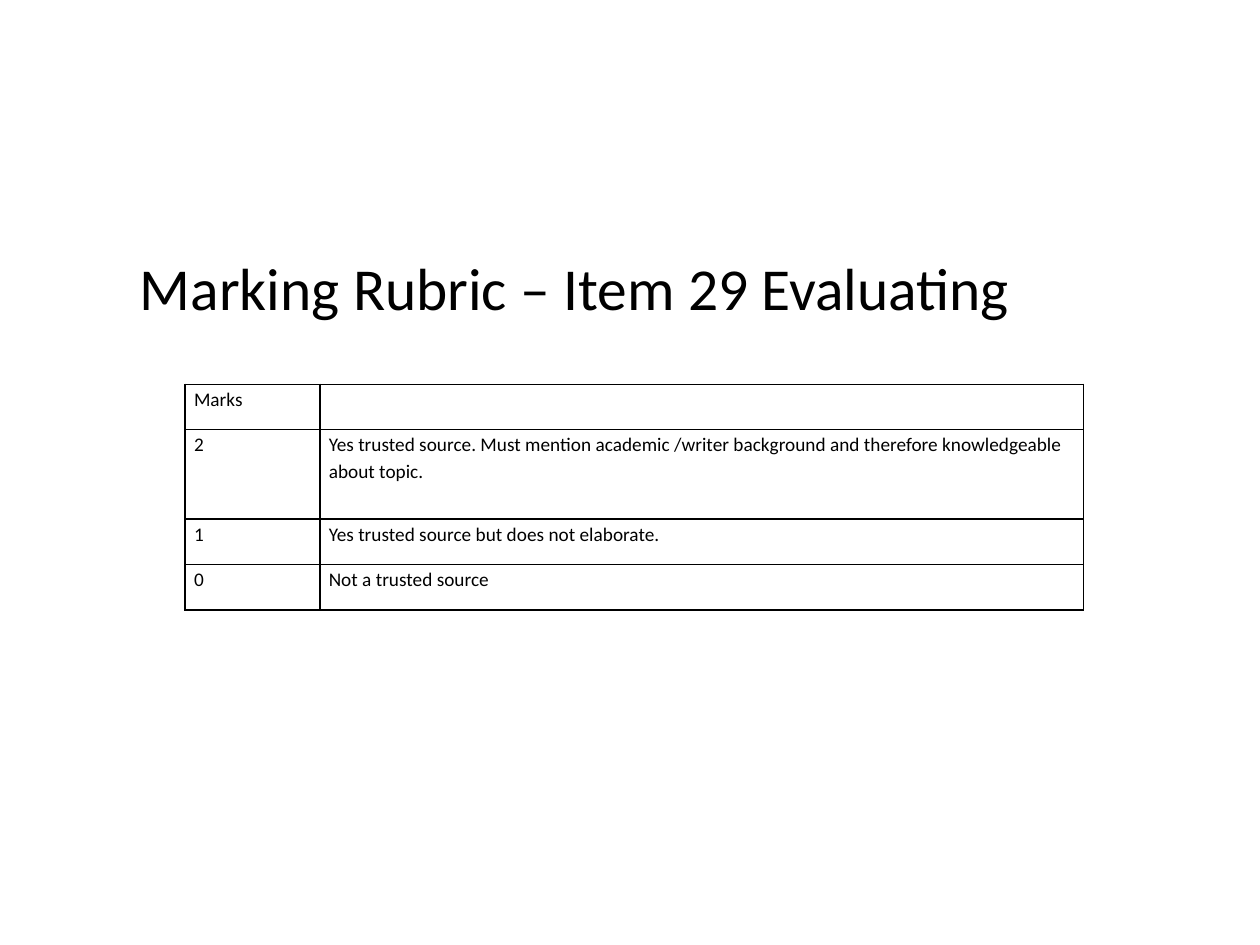
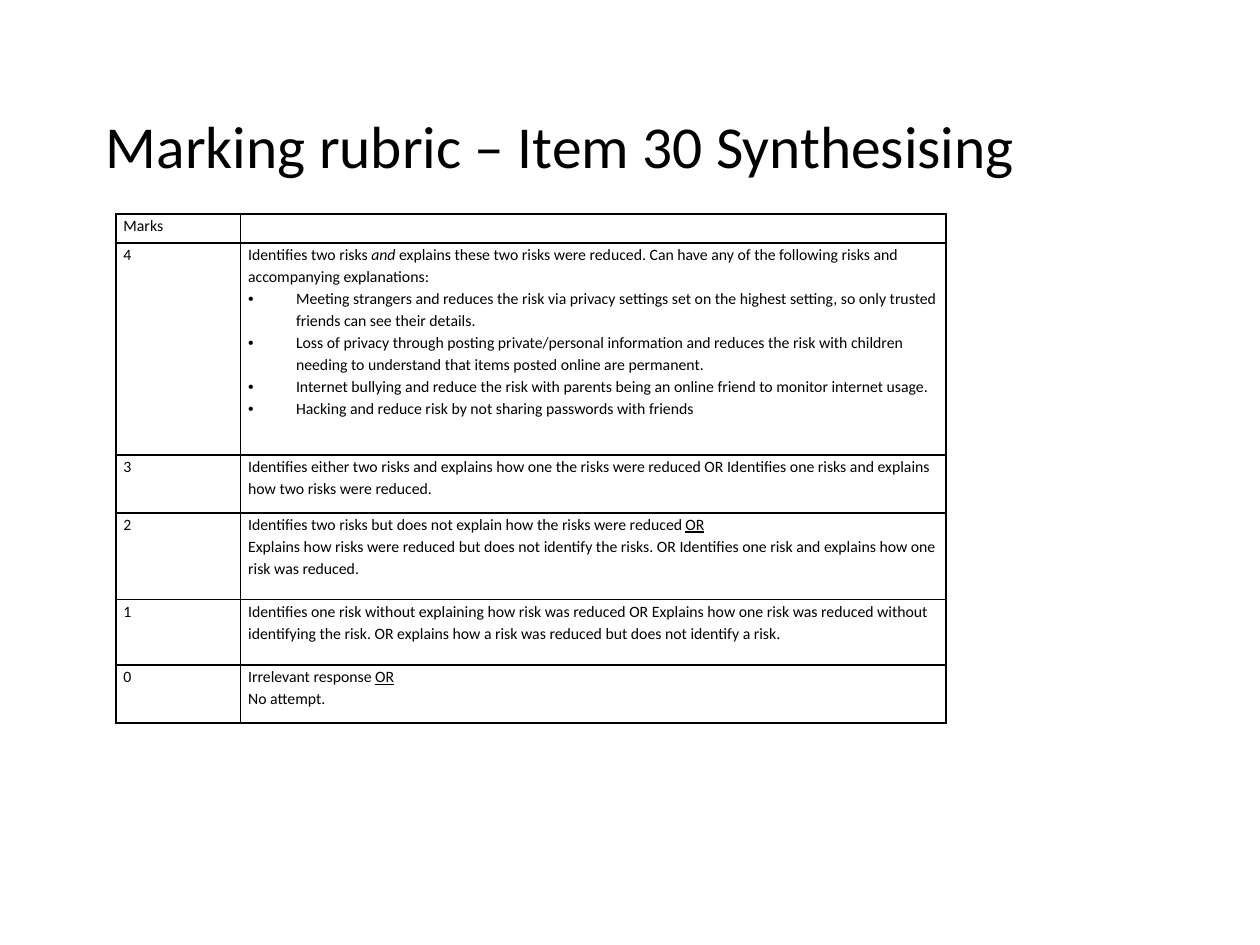
from pptx import Presentation
from pptx.dml.color import RGBColor
from pptx.enum import text
from pptx.oxml.ns import qn
from pptx.util import Inches, Pt
from lxml import etree

FONT = "Calibri"
COLORS = {"ink": "000000", "paper": "FFFFFF"}
TITLE_SIZE = 34
TITLE_WIDTH, TITLE_HEIGHT = 8.49, 0.75
LINE_SPACING = 1.15
BORDER_WIDTH = 1
BULLET_INDENT = 0.38

# A cell is a list of paragraphs, a paragraph a list of runs:
# plain strings, or (text, style) with style "italic" or "underline".
# Paragraphs that start with the BULLET marker become list items.
BULLET = object()

ITEM_29_ROWS = [
    (0.36, "Marks", []),
    (0.71, "2", [["Yes trusted source. Must mention academic /writer background "
                  "and therefore knowledgeable about topic."]]),
    (0.36, "1", [["Yes trusted source but does not elaborate."]]),
    (0.36, "0", [["Not a trusted source"]]),
]

ITEM_30_ROWS = [
    (0.23, "Marks", []),
    (1.68, "4", [
        ["Identifies two risks ", ("and", "italic"),
         " explains these two risks were reduced. Can have any of the following "
         "risks and accompanying explanations:"],
        [BULLET, "Meeting strangers and reduces the risk via privacy settings set on "
                 "the highest setting, so only trusted friends can see their details."],
        [BULLET, "Loss of privacy through posting private/personal information and "
                 "reduces the risk with children needing to understand that items "
                 "posted online are permanent."],
        [BULLET, "Internet bullying and reduce the risk with parents being an online "
                 "friend to monitor internet usage."],
        [BULLET, "Hacking and reduce risk by not sharing passwords with friends"],
    ]),
    (0.46, "3", [["Identifies either two risks and explains how one the risks were "
                  "reduced OR Identifies one risks and explains how two risks were "
                  "reduced."]]),
    (0.69, "2", [
        ["Identifies two risks but does not explain how the risks were reduced ",
         ("OR", "underline")],
        ["Explains how risks were reduced but does not identify the risks. OR "
         "Identifies one risk and explains how one risk was reduced."],
    ]),
    (0.52, "1", [["Identifies one risk without explaining how risk was reduced OR "
                  "Explains how one risk was reduced without identifying the risk. OR "
                  "explains how a risk was reduced but does not identify a risk."]]),
    (0.46, "0", [["Irrelevant response ", ("OR", "underline")], ["No attempt."]]),
]


def color(name):
    return RGBColor.from_string(COLORS[name])


def add_run(paragraph, content, size, style=None):
    run = paragraph.add_run()
    run.text = content
    run.font.name = FONT
    run.font.size = Pt(size)
    run.font.color.rgb = color("ink")
    if style:
        setattr(run.font, style, True)


def add_title(slide, title, left, top):
    shape = slide.shapes.title
    shape.left, shape.top = Inches(left), Inches(top)
    shape.width, shape.height = Inches(TITLE_WIDTH), Inches(TITLE_HEIGHT)
    frame = shape.text_frame
    frame.auto_size = text.MSO_AUTO_SIZE.NONE
    frame.vertical_anchor = text.MSO_ANCHOR.MIDDLE
    paragraph = frame.paragraphs[0]
    paragraph.alignment = text.PP_ALIGN.LEFT
    add_run(paragraph, title, TITLE_SIZE)


def add_bullet(paragraph):
    properties = paragraph._p.get_or_add_pPr()
    indent = Inches(BULLET_INDENT)
    properties.set("marL", str(indent))
    properties.set("indent", str(-indent))
    etree.SubElement(properties, qn("a:buFont"), typeface="Arial")
    etree.SubElement(properties, qn("a:buChar"), char="•")


def set_borders(cell):
    properties = cell._tc.get_or_add_tcPr()
    for position, side in enumerate(("lnL", "lnR", "lnT", "lnB")):
        line = etree.Element(qn(f"a:{side}"), w=str(Pt(BORDER_WIDTH)))
        fill = etree.SubElement(line, qn("a:solidFill"))
        etree.SubElement(fill, qn("a:srgbClr"), val=COLORS["ink"])
        properties.insert(position, line)


def fill_cell(cell, paragraphs, size, inset):
    cell.margin_left = cell.margin_right = Inches(inset)
    cell.margin_top = cell.margin_bottom = 0
    cell.fill.solid()
    cell.fill.fore_color.rgb = color("paper")
    set_borders(cell)

    frame = cell.text_frame
    for index, runs in enumerate(paragraphs):
        paragraph = frame.add_paragraph() if index else frame.paragraphs[0]
        paragraph.line_spacing = LINE_SPACING
        for run in runs:
            if run is BULLET:
                add_bullet(paragraph)
            elif isinstance(run, tuple):
                add_run(paragraph, run[0], size, run[1])
            else:
                add_run(paragraph, run, size)
    if not paragraphs:
        # An empty cell needs the small size too, or its row grows
        etree.SubElement(frame.paragraphs[0]._p, qn("a:endParaRPr"), sz=str(size * 100))


def add_rubric(slide, rows, left, top, column_widths, size, inset):
    frame = slide.shapes.add_table(
        len(rows), len(column_widths), Inches(left), Inches(top),
        Inches(sum(column_widths)), Inches(sum(row[0] for row in rows)))
    table = frame.table
    table.first_row = table.horz_banding = False
    for column, width in zip(table.columns, column_widths):
        column.width = Inches(width)
    for index, (height, marks, criteria) in enumerate(rows):
        table.rows[index].height = Inches(height)
        fill_cell(table.cell(index, 0), [[marks]], size, inset)
        fill_cell(table.cell(index, 1), criteria, size, inset)


def main():
    presentation = Presentation()
    presentation.slide_width, presentation.slide_height = Inches(10), Inches(7.5)
    title_only = presentation.slide_layouts[5]

    # Item 29
    slide = presentation.slides.add_slide(title_only)
    add_title(slide, "Marking Rubric – Item 29 Evaluating", 1.01, 1.9)
    add_rubric(slide, ITEM_29_ROWS, 1.47, 3.05, (1.07, 6.06), size=11, inset=0.07)

    # Item 30
    slide = presentation.slides.add_slide(title_only)
    add_title(slide, "Marking rubric – Item 30 Synthesising", 0.74, 0.77)
    add_rubric(slide, ITEM_30_ROWS, 0.92, 1.7, (0.99, 5.6), size=9, inset=0.06)

    presentation.save("out.pptx")


if __name__ == "__main__":
    main()
